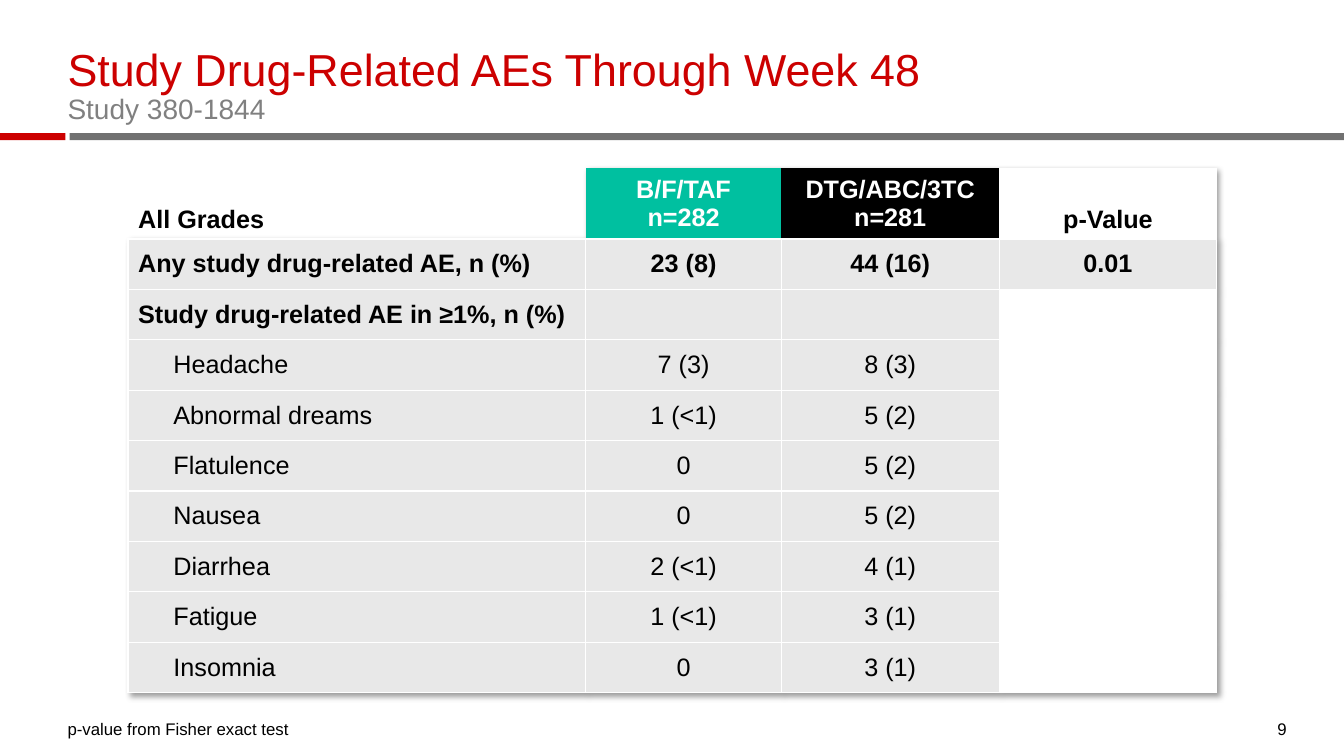
"""Build the slide on study drug-related adverse events."""
from typing import NamedTuple

import pptx
import pptx.dml.color
import pptx.enum.shapes
import pptx.enum.text
import pptx.oxml
import pptx.oxml.ns
import pptx.util

RGB = pptx.dml.color.RGBColor
Inches = pptx.util.Inches
Pt = pptx.util.Pt
ANCHOR = pptx.enum.text.MSO_ANCHOR
ALIGN = pptx.enum.text.PP_ALIGN

RED = RGB(0xCC, 0x00, 0x00)
GRAY = RGB(0x71, 0x71, 0x71)
MID = RGB(0x80, 0x80, 0x80)
PALE = RGB(0xE8, 0xE8, 0xE8)
TEAL = RGB(0x00, 0xC0, 0xA0)
BLACK = RGB(0x00, 0x00, 0x00)
WHITE = RGB(0xFF, 0xFF, 0xFF)

SHADOW = (
    f'<a:effectLst {pptx.oxml.ns.nsdecls("a")}>'
    '<a:outerShdw blurRad="50800" dist="38100" dir="2700000" algn="tl">'
    '<a:srgbClr val="000000"><a:alpha val="40000"/></a:srgbClr>'
    '</a:outerShdw></a:effectLst>'
)


class Bar(NamedTuple):
    left: float
    width: float
    color: RGB


class Note(NamedTuple):
    text: str
    left: float
    top: float
    width: float
    height: float


class Head(NamedTuple):
    text: str
    width: float
    fill: RGB | None
    color: RGB
    anchor: ANCHOR
    side: float


class Event(NamedTuple):
    name: str
    first: str
    second: str
    value: str = ""
    bold: bool = False


BARS = [Bar(0.69, 12.65, GRAY), Bar(0, 0.65, RED)]
NOTES = [
    Note("9", 12.67, 7.15, 0.36, 0.18),
    Note("p-value from Fisher exact test", 0.67, 6.93, 11.9, 0.4),
]
HEADS = [
    Head("All Grades", 4.54, None, BLACK, ANCHOR.BOTTOM, 0.1),
    Head("B/F/TAF\nn=282", 1.94, TEAL, WHITE, ANCHOR.MIDDLE, 0.13),
    Head("DTG/ABC/3TC\nn=281", 2.16, BLACK, WHITE, ANCHOR.MIDDLE, 0.13),
    Head("p-Value", 2.16, WHITE, BLACK, ANCHOR.BOTTOM, 0.13),
]
EVENTS = [
    Event("Any study drug-related AE, n (%)", "23 (8)", "44 (16)", "0.01", True),
    Event("Study drug-related AE in ≥1%, n (%)", "", "", bold=True),
    Event("Headache", "7 (3)", "8 (3)"),
    Event("Abnormal dreams", "1 (<1)", "5 (2)"),
    Event("Flatulence", "0", "5 (2)"),
    Event("Nausea", "0", "5 (2)"),
    Event("Diarrhea", "2 (<1)", "4 (1)"),
    Event("Fatigue", "1 (<1)", "3 (1)"),
    Event("Insomnia", "0", "3 (1)"),
]


def style(font, size: float, color: RGB, bold: bool = False) -> None:
    """Set the face, size, colour and weight of a font."""
    font.name = "Arial"
    font.size = Pt(size)
    font.color.rgb = color
    font.bold = bold


def draw_bar(slide, bar: Bar) -> None:
    """Draw one part of the rule under the title."""
    shape = slide.shapes.add_shape(
        pptx.enum.shapes.MSO_SHAPE.RECTANGLE,
        Inches(bar.left), Inches(1.32), Inches(bar.width), Inches(0.07))
    shape.shadow.inherit = False
    shape.fill.solid()
    shape.fill.fore_color.rgb = bar.color
    shape.line.fill.background()


def add_box(slide, left: float, top: float, width: float, height: float):
    """Add a bottom-anchored text box without margins and return its frame."""
    box = slide.shapes.add_textbox(
        Inches(left), Inches(top), Inches(width), Inches(height))
    frame = box.text_frame
    frame.word_wrap = True
    frame.vertical_anchor = ANCHOR.BOTTOM
    frame.margin_left = frame.margin_right = 0
    frame.margin_top = frame.margin_bottom = 0
    return frame


def draw_title(slide) -> None:
    """Write the title and the study name below it."""
    para = add_box(slide, 0.67, 0.51, 12, 0.74).paragraphs[0]
    para.line_spacing = 0.9
    run = para.add_run()
    run.text = "Study Drug-Related AEs Through Week 48"
    style(run.font, 32, RED)
    para.add_line_break()
    run = para.add_run()
    run.text = "Study 380-1844"
    style(run.font, 20, MID)


def draw_note(slide, note: Note) -> None:
    """Write one small text at the foot of the slide."""
    para = add_box(slide, *note[1:]).paragraphs[0]
    para.text = note.text
    style(para.font, 12, BLACK)


def fill_cell(cell, text: str, color: RGB, bold: bool, center: bool,
              fill: RGB | None, anchor: ANCHOR, side: float, edge: float) -> None:
    """Write and format one table cell."""
    cell.text = text
    cell.vertical_anchor = anchor
    cell.margin_left = cell.margin_right = Inches(side)
    cell.margin_top = cell.margin_bottom = Inches(edge)
    if fill is None:
        cell.fill.background()
    else:
        cell.fill.solid()
        cell.fill.fore_color.rgb = fill
    for para in cell.text_frame.paragraphs:
        para.alignment = ALIGN.CENTER if center else ALIGN.LEFT
        style(para.font, 18, color, bold)


def clear_edges(cell) -> None:
    """Remove the border lines of a cell."""
    props = cell._tc.get_or_add_tcPr()
    for tag in ("lnL", "lnR", "lnT", "lnB"):
        line = pptx.oxml.parse_xml(
            f'<a:{tag} {pptx.oxml.ns.nsdecls("a")}><a:noFill/></a:{tag}>')
        props.append(line)


def draw_table(slide) -> None:
    """Draw the table of adverse events."""
    frame = slide.shapes.add_table(
        len(EVENTS) + 1, len(HEADS),
        Inches(1.27), Inches(1.67), Inches(10.8), Inches(5.16))
    table = frame.table
    table.first_row = table.horz_banding = False
    table._tbl.tblPr.insert(0, pptx.oxml.parse_xml(SHADOW))
    for row in table.rows:
        row.height = Inches(0.5)
    table.rows[0].height = Inches(0.66)
    for col, head in enumerate(HEADS):
        table.columns[col].width = Inches(head.width)
        cell = table.cell(0, col)
        clear_edges(cell)
        fill_cell(cell, head.text, head.color, True, col > 0,
                  head.fill, head.anchor, head.side, 0.05)
    for row, event in enumerate(EVENTS, 1):
        for col, text in enumerate(event[:4]):
            blank = col == 3 and not text
            cell = table.cell(row, col)
            fill_cell(cell, text, BLACK, event.bold, col > 0,
                      WHITE if blank else PALE, ANCHOR.MIDDLE, 0.1, 0.03)
        if not event.bold:
            table.cell(row, 0).margin_left = Inches(0.45)


def main() -> None:
    """Make the slide and save it."""
    deck = pptx.Presentation()
    deck.slide_width = Inches(13.33)
    deck.slide_height = Inches(7.5)
    slide = deck.slides.add_slide(deck.slide_layouts[6])
    for bar in BARS:
        draw_bar(slide, bar)
    draw_title(slide)
    for note in NOTES:
        draw_note(slide, note)
    draw_table(slide)
    deck.save("out.pptx")


if __name__ == "__main__":
    main()
